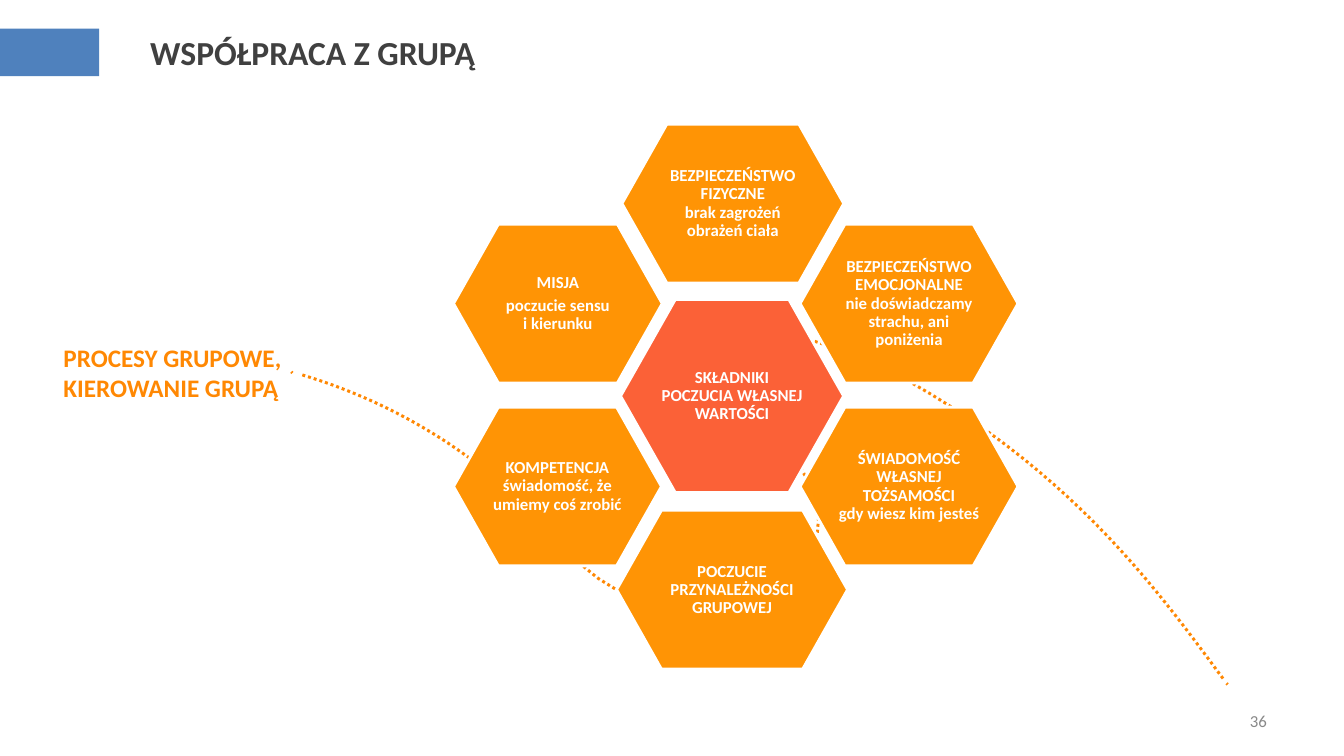
from pptx import Presentation
from pptx.dml.color import RGBColor
from pptx.enum.dml import MSO_LINE
from pptx.enum.shapes import MSO_SHAPE
from pptx.enum.text import MSO_ANCHOR, PP_ALIGN
from pptx.util import Cm, Pt

BLUE = RGBColor(0x4F, 0x81, 0xBD)
ORANGE = RGBColor(0xFF, 0x94, 0x05)
CORAL = RGBColor(0xFB, 0x61, 0x37)
ACCENT = RGBColor(0xFF, 0x88, 0x03)
WHITE = RGBColor(0xFF, 0xFF, 0xFF)
DARK = RGBColor(0x40, 0x40, 0x40)
GREY = RGBColor(0x89, 0x89, 0x89)


def style_text(tf, size, color, bold, align):
    for p in tf.paragraphs:
        p.alignment = align
        for r in p.runs:
            r.font.name = "Calibri"
            r.font.size = Pt(size)
            r.font.bold = bold
            r.font.color.rgb = color


def add_outline(points, close):
    points = [(Cm(x), Cm(y)) for x, y in points]
    builder = s.shapes.build_freeform(*points[0])
    builder.add_line_segments(points[1:], close=close)
    sp = builder.convert_to_shape()
    sp.shadow.inherit = False
    return sp


prs = Presentation()
prs.slide_width = Cm(33.87)
prs.slide_height = Cm(19.05)
s = prs.slides.add_slide(prs.slide_layouts[5])

bar = s.shapes.add_shape(MSO_SHAPE.RECTANGLE, 0, Cm(0.72), Cm(2.5), Cm(1.2))
bar.shadow.inherit = False
bar.fill.solid()
bar.fill.fore_color.rgb = BLUE
bar.line.fill.background()

title = s.shapes.title
title.left, title.top, title.width, title.height = Cm(3.53), Cm(0.53), Cm(15.2), Cm(1.57)
title.text_frame.text = "WSPÓŁPRACA Z GRUPĄ"
title.text_frame.vertical_anchor = MSO_ANCHOR.MIDDLE
style_text(title.text_frame, 24, DARK, True, PP_ALIGN.LEFT)

bends = [
    [(7.62, 9.45), (9.22, 9.93), (11.91, 11.05), (14.15, 13.72)],
    [(14.15, 13.72), (17.63, 17.83), (24.31, 13.51), (18.06, 10.03)],
    [(18.06, 10.03), (14.02, 7.77), (19.1, 7.44), (22.94, 9.63)],
    [(22.94, 9.63), (27.2, 12.04), (29.34, 15.11), (30.86, 17.15)],
]
steps = 24
curve = [bends[0][0]]
for bend in bends:
    for i in range(1, steps + 1):
        t = i / steps
        weights = [(1 - t) ** 3, 3 * t * (1 - t) ** 2, 3 * t ** 2 * (1 - t), t ** 3]
        curve.append([sum(w * pt[axis] for w, pt in zip(weights, bend)) for axis in (0, 1)])

for points in ([(7.34, 9.37), (7.37, 9.4)], curve, [(30.91, 17.22), (30.94, 17.25)]):
    sp = add_outline(points, False)
    sp.fill.background()
    sp.line.color.rgb = ACCENT
    sp.line.width = Pt(2.13)
    sp.line.dash_style = MSO_LINE.ROUND_DOT

hexagons = [
    (18.45, 9.98, 5.62, 4.87, 1.38, 0.96, CORAL, "SKŁADNIKI POCZUCIA WŁASNEJ WARTOŚCI"),
    (18.47, 5.13, 5.59, 4, 1.13, 0.89, ORANGE,
     "BEZPIECZEŃSTWO FIZYCZNE\vbrak zagrożeń obrażeń ciała"),
    (22.91, 7.65, 5.49, 4, 1.13, 0.89, ORANGE,
     "BEZPIECZEŃSTWO EMOCJONALNE\vnie doświadczamy strachu, ani\vponiżenia"),
    (22.91, 12.26, 5.49, 4, 1.13, 0.89, ORANGE,
     "ŚWIADOMOŚĆ WŁASNEJ TOŻSAMOŚCI\vgdy wiesz kim jesteś"),
    (18.45, 14.86, 5.82, 4, 1.13, 0.91, ORANGE, "POCZUCIE PRZYNALEŻNOŚCI GRUPOWEJ"),
    (14.05, 12.26, 5.24, 4, 1.13, 0.86, ORANGE,
     "KOMPETENCJA\vświadomość, że umiemy coś zrobić"),
    (14.06, 7.65, 5.26, 4, 1.13, 0.86, ORANGE, "MISJA\npoczucie sensu\vi kierunku"),
]
for cx, cy, w, h, cut, margin, color, text in hexagons:
    left, right, top, bottom = cx - w / 2, cx + w / 2, cy - h / 2, cy + h / 2
    sp = add_outline([(left, cy), (left + cut, top), (right - cut, top),
                      (right, cy), (right - cut, bottom), (left + cut, bottom)], True)
    sp.fill.solid()
    sp.fill.fore_color.rgb = color
    sp.line.color.rgb = WHITE
    sp.line.width = Pt(2)
    tf = sp.text_frame
    tf.word_wrap = True
    tf.vertical_anchor = MSO_ANCHOR.MIDDLE
    tf.margin_left = tf.margin_right = Cm(margin)
    tf.margin_top = tf.margin_bottom = Cm(0.65)
    tf.text = text
    style_text(tf, 12, WHITE, True, PP_ALIGN.CENTER)
    for p in tf.paragraphs:
        p.line_spacing = 0.9
        p.space_after = Pt(4)

topic = s.shapes.add_textbox(Cm(1.35), Cm(8.5), Cm(6.22), Cm(1.8))
topic.text_frame.text = "PROCESY GRUPOWE,\nKIEROWANIE GRUPĄ"
style_text(topic.text_frame, 18, ACCENT, True, PP_ALIGN.LEFT)

number = s.shapes.add_textbox(Cm(24.28), Cm(17.65), Cm(7.9), Cm(1.02))
number.text_frame.word_wrap = True
number.text_frame.text = "36"
number.text_frame.vertical_anchor = MSO_ANCHOR.MIDDLE
style_text(number.text_frame, 12, GREY, False, PP_ALIGN.RIGHT)

prs.save("out.pptx")
